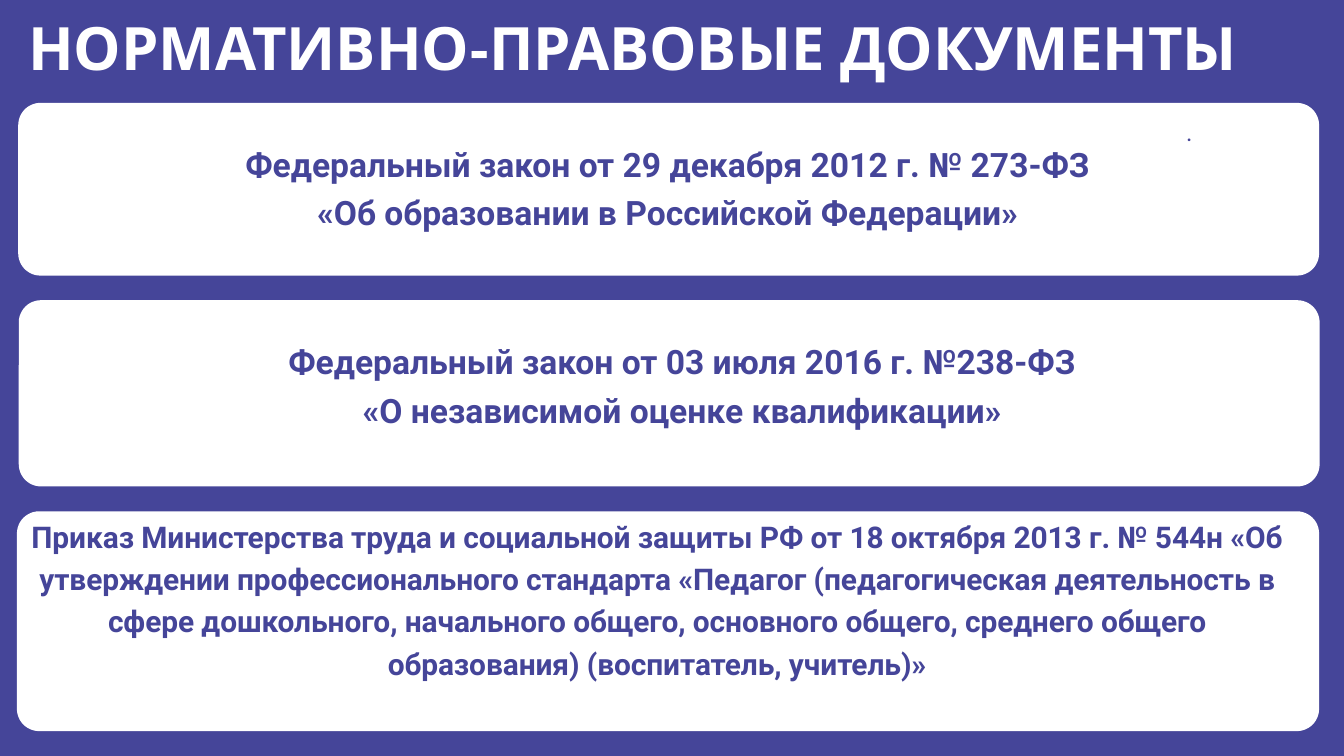
from pptx import Presentation
from pptx.dml.color import RGBColor
from pptx.enum.shapes import MSO_SHAPE
from pptx.enum.text import MSO_ANCHOR, MSO_AUTO_SIZE, PP_ALIGN
from pptx.util import Cm, Pt


def color(code):
    return RGBColor.from_string(code)


class Deck:
    blue = "454599"
    white = "FFFFFF"
    face = "Roboto"
    round = 0.84

    def __init__(self, file):
        self.slide = file.slides.add_slide(file.slide_layouts[5])
        fill = self.slide.background.fill
        fill.solid()
        fill.fore_color.rgb = color(self.blue)

    def setup(self, frame, top):
        frame.word_wrap = True
        frame.auto_size = MSO_AUTO_SIZE.NONE
        frame.vertical_anchor = MSO_ANCHOR.TOP
        frame.margin_left = frame.margin_right = frame.margin_bottom = 0
        frame.margin_top = Cm(top)

    def style(self, para, size, code, bold=True):
        para.font.size = Pt(size)
        para.font.bold = bold
        para.font.color.rgb = color(code)

    def title(self, parts, left, top, width, height):
        shape = self.slide.shapes.title
        shape.left, shape.top = Cm(left), Cm(top)
        shape.width, shape.height = Cm(width), Cm(height)
        self.setup(shape.text_frame, 0.03)
        para = shape.text_frame.paragraphs[0]
        para.alignment = PP_ALIGN.LEFT
        para.space_before = Pt(1)
        self.style(para, 64, self.white)
        for text, face in parts:
            run = para.add_run()
            run.text = text
            run.font.name = face

    def card(self, left, top, width, height):
        shape = self.slide.shapes.add_shape(
            MSO_SHAPE.ROUNDED_RECTANGLE, Cm(left), Cm(top), Cm(width), Cm(height))
        shape.adjustments[0] = self.round / height
        shape.shadow.inherit = False
        shape.fill.solid()
        shape.fill.fore_color.rgb = color(self.white)
        shape.line.fill.background()

    def box(self, left, top, width, height, inset=0.03):
        shape = self.slide.shapes.add_textbox(
            Cm(left), Cm(top), Cm(width), Cm(height))
        self.setup(shape.text_frame, inset)
        return shape.text_frame

    def line(self, frame, text, size=36, above=0, pitch=None, bold=True,
             align=PP_ALIGN.CENTER, track=0):
        para = frame.paragraphs[0]
        if para.runs:
            para = frame.add_paragraph()
        run = para.add_run()
        run.text = text
        para.alignment = align
        para.space_before = Pt(above)
        if pitch:
            para.line_spacing = pitch
        self.style(para, size, self.blue, bold)
        para.font.name = self.face
        if track:
            run._r.get_or_add_rPr().set("spc", str(track))


def main():
    file = Presentation()
    file.slide_width, file.slide_height = Cm(50.8), Cm(28.58)
    deck = Deck(file)

    deck.title([("НОРМАТИВНО", "Noto Sans"), ("-", "Arial"),
                ("ПРАВОВЫЕ ДОКУМЕНТЫ", "Noto Sans")], 1.07, 0.36, 46.33, 4.8)

    deck.card(0.69, 3.89, 49.17, 6.53)
    law = deck.box(5.41, 4.47, 39.67, 4.32)
    deck.line(law, ".", 26, 1, Pt(29.2), False, PP_ALIGN.RIGHT)
    deck.line(law, "Федеральный закон от 29 декабря 2012 г. № 273-ФЗ", pitch=Pt(41.2))
    deck.line(law, "«Об образовании в Российской Федерации»", above=7.8)

    deck.card(0.71, 11.35, 49.17, 7.04)
    law = deck.box(7.39, 12.6, 36.8, 3.66, 0.3)
    for text in ("Федеральный закон от 03 июля 2016 г. №238-ФЗ",
                 "«О независимой оценке квалификации»"):
        deck.line(law, text, above=8.8)

    deck.card(0.64, 19.33, 49.22, 8.31)
    order = deck.box(0.99, 19.33, 47.7, 8.03)
    deck.line(order, "Приказ Министерства труда и социальной защиты РФ от 18 октября "
              "2013 г. № 544н «Об утверждении профессионального стандарта «Педагог "
              "(педагогическая деятельность в сфере дошкольного, начального общего, "
              "основного общего, среднего общего образования) (воспитатель, учитель)»",
              32, 1, 1.18, track=-10)

    file.save("out.pptx")


if __name__ == "__main__":
    main()
